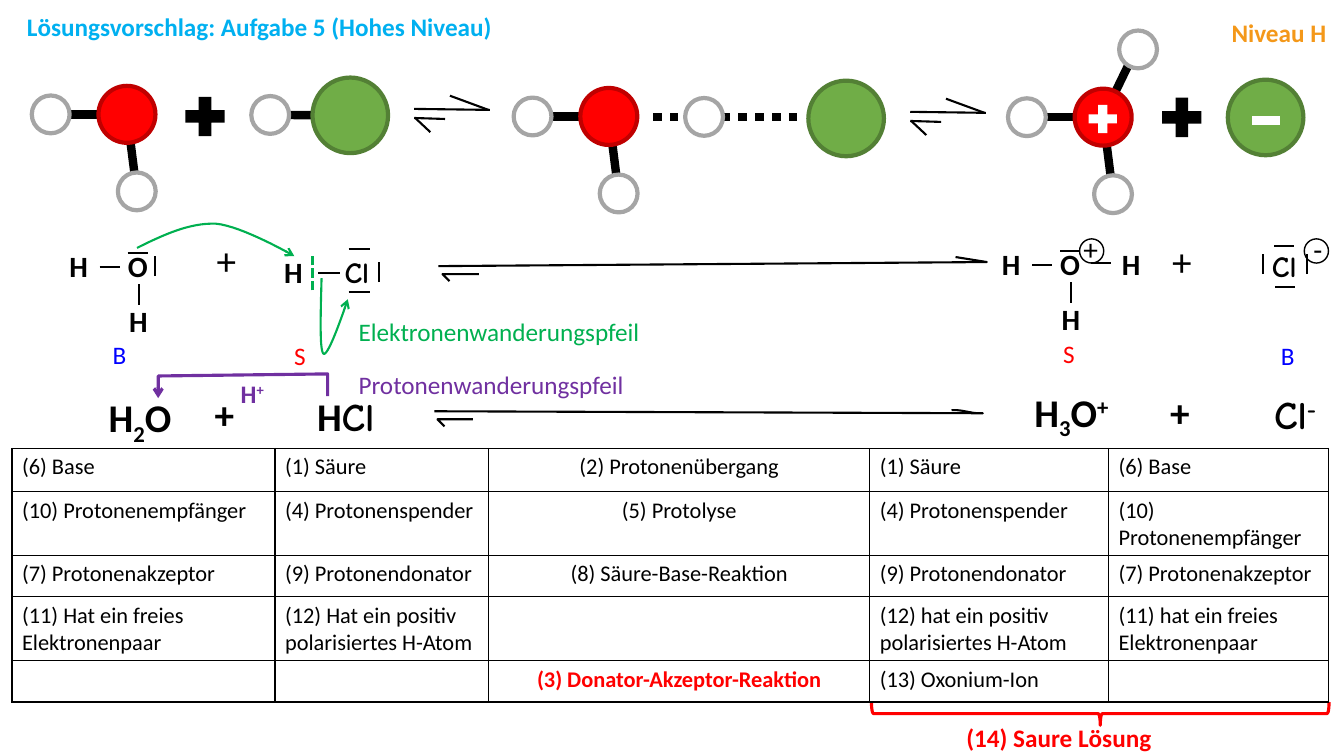
from dataclasses import dataclass

from lxml import etree
from pptx import Presentation
from pptx.dml.color import RGBColor
from pptx.enum import dml, shapes, text
from pptx.oxml.ns import qn
from pptx.util import Pt


@dataclass(frozen=True)
class Theme:
    black: str = "000000"
    white: str = "FFFFFF"
    grey: str = "A5A5A5"
    red: str = "FF0000"
    dark_red: str = "C00000"
    green: str = "70AD47"
    dark_green: str = "538035"
    electron: str = "00B050"
    proton: str = "7030A0"
    base: str = "0000FF"
    title: str = "00B0F0"
    level: str = "F49819"
    font: str = "Calibri"
    chlorine_font: str = "Comic Neue"
    cell: int = 16
    label: int = 18
    atom: int = 21
    formula: int = 28


theme = Theme()
deck = Presentation()
deck.slide_width, deck.slide_height = Pt(960), Pt(540)
slide = deck.slides.add_slide(deck.slide_layouts[6])
SHAPE = shapes.MSO_SHAPE
LEFT, CENTER = text.PP_ALIGN.LEFT, text.PP_ALIGN.CENTER


def write(frame, runs, size=theme.label, color=theme.black, bold=False,
          align=LEFT, font=theme.font):
    """Fill a frame, or a new box at (x, y, w, h), with a string or (text, baseline, font) runs."""
    if isinstance(frame, tuple):
        frame = slide.shapes.add_textbox(*map(Pt, frame)).text_frame
    frame.word_wrap = True
    paragraph = frame.paragraphs[0]
    paragraph.alignment = align
    for words, baseline, face in [(runs, 0, font)] if isinstance(runs, str) else runs:
        run = paragraph.add_run()
        run.text = words
        run.font.name, run.font.size, run.font.bold = face, Pt(size), bold
        run.font.color.rgb = RGBColor.from_string(color)
        if baseline:
            run.font._element.set("baseline", str(baseline * 1000))


def outline(item, color=theme.black, width=1.5, dash=None, arrow=False):
    """Style a line, without shadow."""
    item.line.color.rgb = RGBColor.from_string(color)
    item.line.width = Pt(width)
    if dash:
        item.line.dash_style = dash
    properties = item._element.spPr
    if arrow:
        etree.SubElement(properties.find(qn("a:ln")), qn("a:tailEnd"), type="arrow")
    etree.SubElement(properties, qn("a:effectLst"))


# Particle models: bonds lie behind the atoms
DOTTED = dml.MSO_LINE.ROUND_DOT
bonds = [(193, 82.1, 250.2, 82.4, None), (811.4, 35.3, 788, 83.7, None),
         (466.6, 83.5, 493.9, 83.5, DOTTED), (515.5, 83.5, 569.5, 83.5, DOTTED)]
hydrogens = [(193, 82.1), (502.9, 83.5), (812.9, 35.3)]
oxygens = [(90.7, 81.7), (434.9, 83.2), (788, 83.7)]
chlorines = [(250.2, 82.4), (604.4, 84.6), (904, 83.9)]
for x, y in oxygens:
    for dx, dy in [(-54.5, 0), (7, 55)]:
        bonds.append((x + dx, y + dy, x, y, None))
        hydrogens.append((x + dx, y + dy))

STRAIGHT = shapes.MSO_CONNECTOR.STRAIGHT
for *ends, dash in bonds:
    outline(slide.shapes.add_connector(STRAIGHT, *map(Pt, ends)), width=6, dash=dash)

charge_rings = [(940.3, 179.3), (779.8, 179.3)]
for centers, diameter, fill, edge, width in [
        (hydrogens, 27, theme.white, theme.grey, 3),
        (oxygens, 40.7, theme.red, theme.dark_red, 3),
        (chlorines, 54, theme.green, theme.dark_green, 3),
        (charge_rings, 17.3, None, theme.black, 1)]:
    for x, y in centers:
        atom = slide.shapes.add_shape(SHAPE.OVAL, Pt(x - diameter / 2), Pt(y - diameter / 2),
                                      Pt(diameter), Pt(diameter))
        if fill:
            atom.fill.solid()
            atom.fill.fore_color.rgb = RGBColor.from_string(fill)
        else:
            atom.fill.background()
        outline(atom, edge, width)

for preset, x, y, side, color in [
        (SHAPE.MATH_PLUS, 127.4, 64.1, 38.2, theme.black),
        (SHAPE.MATH_PLUS, 825.1, 64.8, 38.2, theme.black),
        (SHAPE.MATH_PLUS, 774, 71.3, 27.4, theme.white),
        (SHAPE.MATH_MINUS, 890.6, 72.7, 27.4, theme.white)]:
    sign = slide.shapes.add_shape(preset, Pt(x), Pt(y), Pt(side), Pt(side))
    sign.fill.solid()
    sign.fill.fore_color.rgb = RGBColor.from_string(color)
    sign.line.fill.background()
    sign.shadow.inherit = False

# Thin strokes: equilibrium arrows and electron pairs
strokes = [(227.5, 195.1, 242.6, 195.1), (249.1, 177.8, 264.2, 177.8),
           (249.1, 208.8, 264.2, 208.8), (270.7, 201.6, 270.7, 187.2),
           (910.8, 205.2, 925.2, 205.2), (910.1, 175.7, 924.5, 175.7),
           (933.8, 195.8, 933.8, 181.4), (902.2, 195.8, 902.2, 181.4),
           (110.9, 197.3, 110.9, 182.9), (779, 187.9, 793.4, 187.9)]
for x, y in [(295.9, 77.8), (650.2, 79.9)]:
    for x1, y1, x2, y2 in [(0, 0, 54, 0.7), (25.5, -9.4, 53, 0.7),
                           (22, 7.2, 0, 6.5), (11.5, 16.6, 0.7, 6.5)]:
        strokes.append((x + x1, y + y1, x + x2, y + y2))

# Structural formulas
symbols = [("H", 195.8, 177.8), ("H", 794.2, 172.1)]
for x, y in [(84.2, 173.5), (750.2, 172.1)]:
    symbols += [("O", x, y), ("H", x - 41.7, y), ("H", x + 1, y + 39.6)]
    for x1, y1, x2, y2 in [(-13, 17.1, 1.4, 17.1), (7, 7, 21.5, 7), (15, 44.2, 15, 29.5)]:
        strokes.append((x + x1, y + y1, x + x2, y + y2))
for stroke in strokes:
    outline(slide.shapes.add_connector(STRAIGHT, *map(Pt, stroke)))
split = slide.shapes.add_connector(STRAIGHT, *map(Pt, (223.2, 207.4, 223.2, 180.7)))
outline(split, theme.electron, 2.25, dml.MSO_LINE.SQUARE_DOT)

for symbol, x, y in symbols:
    write((x, y, 35.3, 33.8), symbol, theme.atom, bold=True)
for x, y in [(239, 177.8), (901.4, 173.5)]:
    write((x, y, 46, 33.8), "Cl", theme.atom, bold=True, font=theme.chlorine_font)
for charge, x in [("-", 931), ("+", 766.8)]:
    write((x, 161.3, 26, 32.4), charge, theme.atom)

# Migration and reaction arrows: a pair is a corner, three pairs are a Bézier curve
for start, steps, color, width, arrow in [
        ((97.9, 177.1), [((116.6, 167.8), (135.4, 159.1), (154.1, 159.8)),
                         ((172.8, 161.3), (210.2, 182.9), (210.2, 182.9))],
         theme.electron, 1.5, True),
        ((229.7, 198.7), [((229, 224.6), (228.2, 250.6), (231.1, 252.7)),
                          ((234.7, 255.6), (248.4, 213.8), (248.4, 213.8))],
         theme.electron, 1.5, True),
        ((234, 283), [(234, 267.1), (113, 268.6), (113, 284.4)], theme.proton, 2.25, True),
        ((313.2, 190.1), [(704.9, 187.2), (682.6, 183.6)], theme.black, 1.5, False),
        ((342, 195.8), [(316.1, 195.8), (321.1, 200.9)], theme.black, 1.5, False),
        ((310.3, 293.8), [(702, 295.2), ((694.8, 295.9), (686.9, 292.3), (679.7, 293))],
         theme.black, 1.5, False),
        ((337.7, 299.5), [(312.5, 299.5), (317.5, 304.6)], theme.black, 1.5, False)]:
    route = [start]
    for step in steps:
        if len(step) == 2:
            route.append(step)
            continue
        controls = (route[-1], *step)
        for t in (n / 16 for n in range(1, 17)):
            weights = ((1 - t) ** 3, 3 * t * (1 - t) ** 2, 3 * t * t * (1 - t), t ** 3)
            route.append(tuple(sum(w * c[axis] for w, c in zip(weights, controls))
                               for axis in (0, 1)))
    corners = [(Pt(x), Pt(y)) for x, y in route]
    builder = slide.shapes.build_freeform(*corners[0])
    builder.add_line_segments(corners[1:], close=False)
    migration = builder.convert_to_shape()
    migration.fill.background()
    outline(migration, color, width, arrow=arrow)

# Sum formulas
for x, y, bold in [(830.2, 166.3, False), (147.6, 165.6, False),
                   (146.2, 275, True), (828.7, 273.6, True)]:
    write((x, y, 28.8, 41), "+", theme.formula, bold=bold)
body, comic = theme.font, theme.chlorine_font
for x, y, width, runs in [
        (61.9, 277.2, 76.3, [("H", 0, body), ("2", -25, body), ("O", 0, body)]),
        (160.6, 276.5, 172.8, [("H", 0, body), ("Cl", 0, comic)]),
        (727.2, 273.6, 76.3, [("H", 0, body), ("3", -25, body), ("O", 0, body), ("+", 30, body)]),
        (838.8, 275, 172.8, [("Cl", 0, comic), ("-", 30, comic)])]:
    write((x, y, width, 41), runs, theme.formula, bold=True, align=CENTER)

# Labels
for x, y, width, words, color, bold, align in [
        (12.2, 4.3, 849.6, "Lösungsvorschlag: Aufgabe 5 (Hohes Niveau)", theme.title, True, LEFT),
        (872.6, 8.6, 87.1, "Niveau H", theme.level, True, LEFT),
        (249.1, 222.5, 288, "Elektronenwanderungspfeil", theme.electron, False, LEFT),
        (249.1, 260.6, 288, "Protonenwanderungspfeil", theme.proton, False, LEFT),
        (164.9, 266.4, 40.3, [("H", 0, body), ("+", 30, body)], theme.proton, True, LEFT),
        (64.8, 239, 41, "B", theme.base, False, CENTER),
        (193.7, 239.8, 41, "S", theme.red, False, CENTER),
        (743, 238.3, 41, "S", theme.red, False, CENTER),
        (899.3, 239.8, 41, "B", theme.base, False, CENTER),
        (622.1, 512.6, 268.6, "(14) Saure Lösung", theme.red, True, CENTER)]:
    write((x, y, width, 28.8), words, color=color, bold=bold, align=align)

brace = slide.shapes.add_shape(SHAPE.RIGHT_BRACE, Pt(777.6), Pt(346.3), Pt(16.6), Pt(326.9))
brace.rotation = 90
brace.fill.background()
outline(brace, theme.red, 2.25)

# Term table
terms = [
    ["(6) Base", "(1) Säure", "(2) Protonenübergang", "(1) Säure", "(6) Base"],
    ["(10) Protonenempfänger", "(4) Protonenspender", "(5) Protolyse",
     "(4) Protonenspender", "(10) Protonenempfänger"],
    ["(7) Protonenakzeptor", "(9) Protonendonator", "(8) Säure-Base-Reaktion",
     "(9) Protonendonator", "(7) Protonenakzeptor"],
    ["(11) Hat ein freies Elektronenpaar", "(12) Hat ein positiv polarisiertes H-Atom", "",
     "(12) hat ein positiv polarisiertes H-Atom", "(11) hat ein freies Elektronenpaar"],
    ["", "", "(3) Donator-Akzeptor-Reaktion", "(13) Oxonium-Ion", ""]]
grid = slide.shapes.add_table(5, 5, Pt(8.6), Pt(320.4), Pt(940.3), Pt(148.8)).table
grid.first_row = grid.horz_banding = False
for column, width in zip(grid.columns, (187.9, 152.6, 272.2, 170.6, 157)):
    column.width = Pt(width)
for row, height in zip(grid.rows, (30.8, 29.5, 29.5, 29.5, 29.5)):
    row.height = Pt(height)
for r, row_terms in enumerate(terms):
    for c, term in enumerate(row_terms):
        cell = grid.cell(r, c)
        key = term.startswith("(3)")
        if term:
            write(cell.text_frame, term, theme.cell, theme.red if key else theme.black,
                  key, CENTER if c == 2 else LEFT)
        for side in ("a:lnL", "a:lnR", "a:lnT", "a:lnB"):
            border = etree.SubElement(cell._tc.get_or_add_tcPr(), qn(side), w=str(Pt(1)))
            ink = etree.SubElement(border, qn("a:solidFill"))
            etree.SubElement(ink, qn("a:srgbClr"), val=theme.black)
        cell.fill.background()

deck.save("out.pptx")
